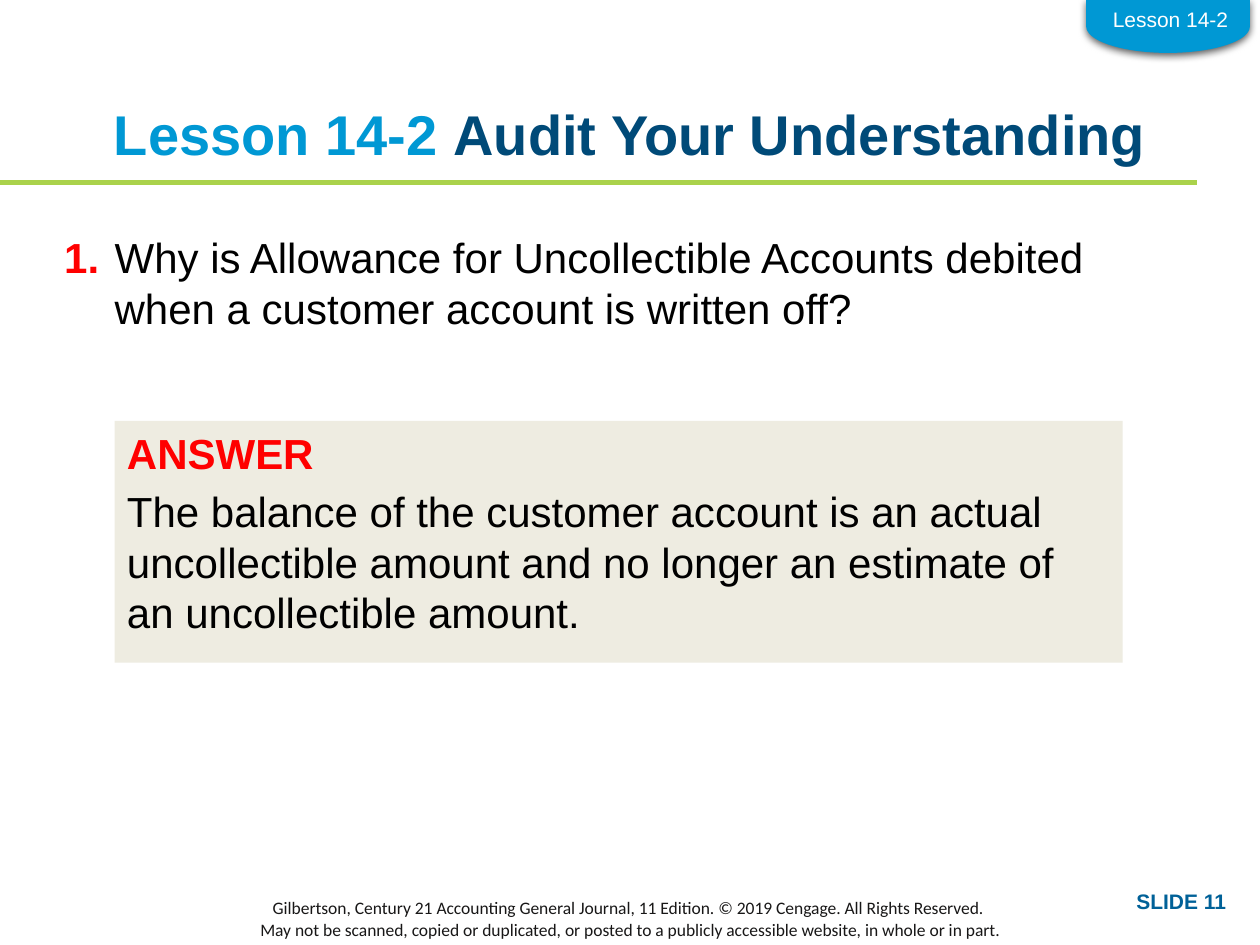
from dataclasses import dataclass

import lxml.etree
import pptx
import pptx.dml.color
import pptx.enum.shapes
import pptx.enum.text
import pptx.oxml
import pptx.oxml.ns
import pptx.util

Inches = pptx.util.Inches
Pt = pptx.util.Pt
Align = pptx.enum.text.PP_ALIGN
Anchor = pptx.enum.text.MSO_ANCHOR
Shape = pptx.enum.shapes.MSO_SHAPE

COLORS = {
    "sky": "0098D4",
    "navy": "004A78",
    "blue": "006198",
    "green": "AAD24B",
    "red": "FF0000",
    "beige": "EEECE1",
    "ink": "181717",
    "black": "000000",
    "white": "FFFFFF",
}


@dataclass
class Run:
    text: str
    color: str
    bold: bool = False


@dataclass
class Block:
    """Text in a box: one list of runs for each paragraph."""
    at: tuple[float, float, float, float]
    paragraphs: list[list[Run]]
    size: float
    font: str = "Arial"
    align: Align = Align.LEFT
    anchor: Anchor = Anchor.TOP
    inset: bool = True
    wrap: bool = True
    gap: float = 0
    hanging: float = 0
    fill: str = ""


def rgb(name: str) -> pptx.dml.color.RGBColor:
    return pptx.dml.color.RGBColor.from_string(COLORS[name])


def add_filled(s, kind: Shape, at: tuple[float, float, float, float], color: str):
    sp = s.shapes.add_shape(kind, *map(Inches, at))
    sp.shadow.inherit = False
    sp.fill.solid()
    sp.fill.fore_color.rgb = rgb(color)
    sp.line.fill.background()
    return sp


def add_block(s, block: Block) -> None:
    if block.fill:
        sp = add_filled(s, Shape.RECTANGLE, block.at, block.fill)
    else:
        sp = s.shapes.add_textbox(*map(Inches, block.at))
    tf = sp.text_frame
    tf.word_wrap = block.wrap
    tf.vertical_anchor = block.anchor
    if not block.inset:
        tf.margin_left = tf.margin_top = tf.margin_right = tf.margin_bottom = 0
    for i, runs in enumerate(block.paragraphs):
        p = tf.paragraphs[0] if i == 0 else tf.add_paragraph()
        p.alignment = block.align
        if i:
            p.space_before = Pt(block.gap)
        if block.hanging:
            pPr = p._p.get_or_add_pPr()
            pPr.set("marL", str(Inches(block.hanging)))
            pPr.set("indent", str(-Inches(block.hanging)))
        p.font.name = block.font
        p.font.size = Pt(block.size)
        for run in runs:
            r = p.add_run()
            r.text = run.text
            r.font.bold = run.bold
            r.font.color.rgb = rgb(run.color)


def add_rule(s, x1: float, x2: float, y: float) -> None:
    line = s.shapes.add_connector(
        pptx.enum.shapes.MSO_CONNECTOR.STRAIGHT,
        Inches(x1), Inches(y), Inches(x2), Inches(y))
    line.line.color.rgb = rgb("green")
    line.line.width = Pt(3)
    lxml.etree.SubElement(line._element.spPr, pptx.oxml.ns.qn("a:effectLst"))


def add_tab(s) -> None:
    sp = add_filled(s, Shape.FLOWCHART_DELAY, (9.06, -0.44, 0.42, 1.3), "sky")
    sp.rotation = 90
    effects = sp._element.spPr.find(pptx.oxml.ns.qn("a:effectLst"))
    effects.append(pptx.oxml.parse_xml(
        f'<a:outerShdw {pptx.oxml.ns.nsdecls("a")} blurRad="{Pt(4.5)}" '
        f'dist="{Pt(1.5)}" dir="5400000" algn="t" rotWithShape="0">'
        f'<a:srgbClr val="{COLORS["black"]}"><a:alpha val="63000"/></a:srgbClr>'
        '</a:outerShdw>'))


FOOTER = Block(
    (0, 7.14, 10, 0.3),
    [[Run("Gilbertson, Century 21 Accounting General Journal, 11 Edition. "
          "© 2019 Cengage. All Rights Reserved. ", "ink")],
     [Run("May not be scanned, copied or duplicated, or posted to a publicly "
          "accessible website, in whole or in part.", "ink")]],
    10, font="Calibri", align=Align.CENTER, anchor=Anchor.MIDDLE)
TITLE = Block(
    (0.5, 0.79, 9, 0.74),
    [[Run("Lesson 14-2 ", "sky", True),
      Run("Audit Your Understanding", "navy", True)]],
    32, align=Align.CENTER, inset=False)
QUESTION = Block(
    (0.51, 1.84, 8.79, 1.26),
    [[Run("1.", "red", True),
      Run("\tWhy is Allowance for Uncollectible Accounts debited when a "
          "customer account is written off?", "black")]],
    24, inset=False, hanging=0.4)
ANSWER = Block(
    (0.91, 3.34, 8, 1.92),
    [[Run("ANSWER", "red", True)],
     [Run("The balance of the customer account is an actual uncollectible "
          "amount and no longer an estimate of an uncollectible amount.",
          "black")]],
    24, gap=4.8, fill="beige")
SLIDE_NUMBER = Block(
    (7.83, 7, 2, 0.3), [[Run("SLIDE 11", "blue", True)]], 12, align=Align.RIGHT)
TAB_LABEL = Block(
    (8.73, 0, 1.12, 0.3), [[Run("Lesson 14-2", "white")]], 12,
    align=Align.CENTER, wrap=False)


def main() -> None:
    prs = pptx.Presentation()
    prs.slide_width, prs.slide_height = Inches(10), Inches(7.5)
    s = prs.slides.add_slide(prs.slide_layouts[6])

    # Rule under the title
    add_rule(s, 0, 9.5, 1.45)

    # Footer, title, question and answer
    for block in (FOOTER, TITLE, QUESTION, ANSWER, SLIDE_NUMBER):
        add_block(s, block)

    # Lesson tab in the top corner
    add_tab(s)
    add_block(s, TAB_LABEL)

    prs.save("out.pptx")


if __name__ == "__main__":
    main()
